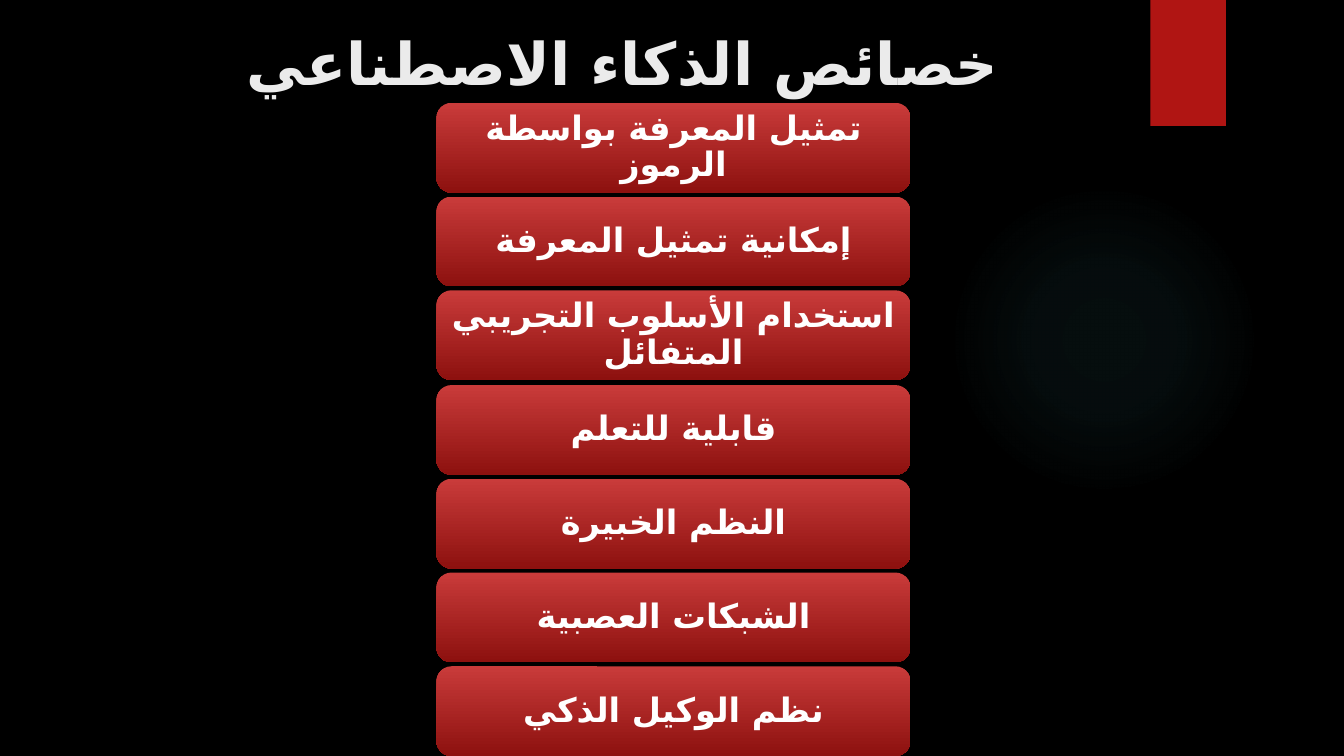
from dataclasses import dataclass

from lxml import etree
from pptx import Presentation
from pptx.dml.color import RGBColor
from pptx.enum.shapes import MSO_SHAPE
from pptx.enum.text import MSO_ANCHOR, PP_ALIGN
from pptx.oxml import parse_xml
from pptx.oxml.ns import nsdecls, qn
from pptx.util import Emu, Pt

PX = 9144  # 100 px to the inch
FONT = "TeX Gyre Adventor"
ARABIC_FONT = "DejaVu Sans"
RECT, OVAL, ROUNDED = MSO_SHAPE.RECTANGLE, MSO_SHAPE.OVAL, MSO_SHAPE.ROUNDED_RECTANGLE
CENTER, TOP, MIDDLE = PP_ALIGN.CENTER, MSO_ANCHOR.TOP, MSO_ANCHOR.MIDDLE

COLORS = {
    "background": "000000",
    "glow": "50B9C1",
    "ribbon": "B01513",
    "bar_top": "C93B3A",
    "bar_bottom": "8D110F",
    "title": "EBEBEB",
    "bar_text": "FFFFFF",
}
GLOW_STOPS = ((0, 7), (36, 6), (69, 0))  # position and opacity in percent

TITLE = "خصائص الذكاء الاصطناعي"
TRAITS = (
    "تمثيل المعرفة بواسطة الرموز",
    "إمكانية تمثيل المعرفة",
    "استخدام الأسلوب التجريبي المتفائل",
    "قابلية للتعلم",
    "النظم الخبيرة",
    "الشبكات العصبية",
    "نظم الوكيل الذكي",
)


@dataclass(frozen=True)
class Box:
    left: int
    top: int
    width: int
    height: int

    def emu(self) -> tuple[Emu, ...]:
        return tuple(Emu(n * PX) for n in (self.left, self.top, self.width, self.height))


GLOW = Box(941, 183, 308, 308)
RIBBON = Box(1141, 0, 75, 125)
TITLE_BOX = Box(44, 21, 1147, 144)
FIRST_BAR = Box(433, 102, 470, 89)
LAST_BAR_TOP = 661


def rgb(name: str) -> RGBColor:
    return RGBColor.from_string(COLORS[name])


def add_plain_shape(slide, kind, box: Box):
    sp = slide.shapes.add_shape(kind, *box.emu())
    sp.shadow.inherit = False
    sp.line.fill.background()
    return sp


def write(sp, text: str, size: int, color: str, anchor, spacing: float) -> None:
    """Put one centred, bold, right-to-left paragraph in a shape."""
    tf = sp.text_frame
    tf.word_wrap = True
    tf.vertical_anchor = anchor
    p = tf.paragraphs[0]
    p.alignment = CENTER
    p.line_spacing = spacing
    p._p.get_or_add_pPr().set("rtl", "1")
    r = p.add_run()
    r.text = text
    for key, value in {"size": Pt(size), "bold": True, "name": FONT}.items():
        setattr(r.font, key, value)
    r.font.color.rgb = rgb(color)
    etree.SubElement(r._r.get_or_add_rPr(), qn("a:cs")).set("typeface", ARABIC_FONT)


def add_glow(slide) -> None:
    sp = add_plain_shape(slide, OVAL, GLOW)
    stops = "".join(
        f'<a:gs pos="{pos * 1000}"><a:srgbClr val="{COLORS["glow"]}">'
        f'<a:alpha val="{alpha * 1000}"/></a:srgbClr></a:gs>'
        for pos, alpha in GLOW_STOPS
    )
    grad = parse_xml(
        f'<a:gradFill {nsdecls("a")}><a:gsLst>{stops}</a:gsLst><a:path path="circle">'
        '<a:fillToRect l="50000" t="50000" r="50000" b="50000"/></a:path></a:gradFill>'
    )
    sp._element.spPr.find(qn("a:prstGeom")).addnext(grad)


def add_ribbon(slide) -> None:
    sp = add_plain_shape(slide, RECT, RIBBON)
    sp.fill.solid()
    sp.fill.fore_color.rgb = rgb("ribbon")


def add_title(slide) -> None:
    sp = slide.shapes.title
    sp.left, sp.top, sp.width, sp.height = TITLE_BOX.emu()
    write(sp, TITLE, 42, "title", TOP, 1.0)


def add_bar(slide, box: Box, text: str) -> None:
    sp = add_plain_shape(slide, ROUNDED, box)
    sp.fill.gradient()
    sp.fill.gradient_angle = 270
    for stop, name in zip(sp.fill.gradient_stops, ("bar_top", "bar_bottom")):
        stop.color.rgb = rgb(name)
    write(sp, text, 24, "bar_text", MIDDLE, 0.9)


def main() -> None:
    prs = Presentation()
    prs.slide_width, prs.slide_height = Emu(1333 * PX), Emu(750 * PX)
    slide = prs.slides.add_slide(prs.slide_layouts[5])
    slide.background.fill.solid()
    slide.background.fill.fore_color.rgb = rgb("background")
    add_glow(slide)
    add_ribbon(slide)
    add_title(slide)
    step = (LAST_BAR_TOP - FIRST_BAR.top) / (len(TRAITS) - 1)
    for i, trait in enumerate(TRAITS):
        top = round(FIRST_BAR.top + i * step)
        add_bar(slide, Box(FIRST_BAR.left, top, FIRST_BAR.width, FIRST_BAR.height), trait)
    prs.save("out.pptx")


if __name__ == "__main__":
    main()
